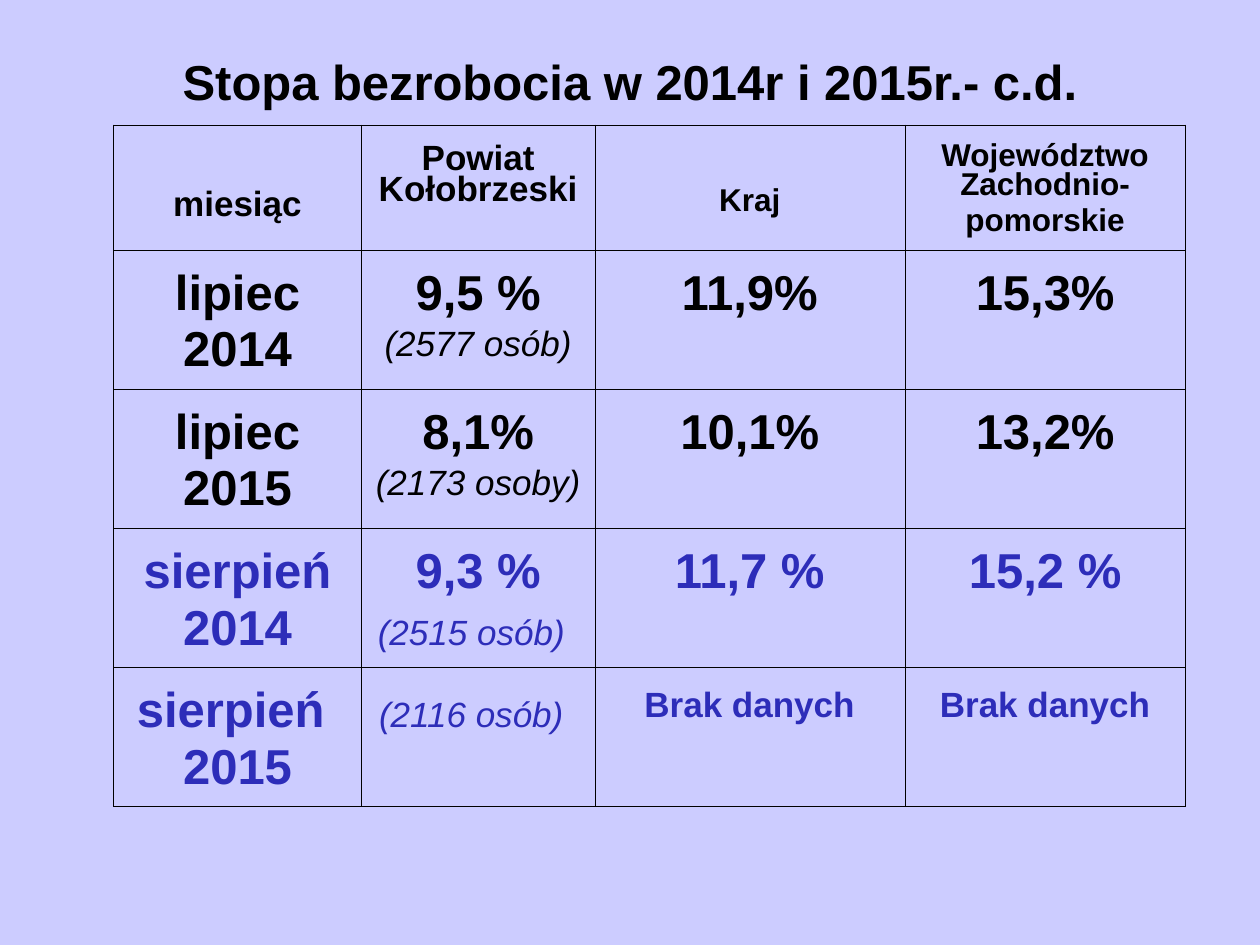
import pptx
import pptx.dml.color
import pptx.enum.text
import pptx.oxml
import pptx.oxml.ns
import pptx.util

WIDTH, HEIGHT = 10, 7.5
BLACK, BLUE, LAVENDER = "000000", "2D2DB9", "CCCCFF"
COLUMNS = [1.97, 1.85, 2.46, 2.23]
ROWS = [0.94] + [1.05] * 4
INNER_LINE, OUTER_LINE = 0.11, 0.23

# Each header: paragraphs, font size, top margin, space before
HEADERS = [
    (["miesiąc"], 20, 0.53, 4.5),
    (["Powiat Kołobrzeski"], 20, 0.16, 5),
    (["Kraj"], 18, 0.51, 4.5),
    (["Województwo Zachodnio-", "pomorskie"], 18, 0.15, 4.5),
]
# Each month: colour, name, year, county rate, county count, country, province
MONTHS = [
    (BLACK, "lipiec", "2014", "9,5 %", "(2577 osób)", "11,9%", "15,3%"),
    (BLACK, "lipiec", "2015", "8,1%", "(2173 osoby)", "10,1%", "13,2%"),
    (BLUE, "sierpień", "2014", "9,3 %", "(2515 osób)", "11,7 %", "15,2 %"),
    (BLUE, "sierpień ", "2015", None, "(2116 osób)", "Brak danych", "Brak danych"),
]


def rgb(value):
    return pptx.dml.color.RGBColor.from_string(value)


def add_run(paragraph, text, size, color=BLACK, italic=False):
    """Add bold text, or regular italic text."""
    run = paragraph.add_run()
    run.text = text
    run.font.name = "Arial"
    run.font.size = pptx.util.Pt(size)
    run.font.bold = not italic
    run.font.italic = italic
    run.font.color.rgb = rgb(color)


def fill_cell(cell, paragraphs, color=BLACK, top=0.2, before=7):
    """Write paragraphs, each a list of (text, size, italic) runs."""
    cell.fill.background()
    cell.margin_top = pptx.util.Inches(top)
    frame = cell.text_frame
    for index, runs in enumerate(paragraphs):
        paragraph = frame.add_paragraph() if index else frame.paragraphs[0]
        paragraph.alignment = pptx.enum.text.PP_ALIGN.CENTER
        paragraph.line_spacing = 0.81
        paragraph.space_before = pptx.util.Pt(before)
        for text, size, italic in runs:
            add_run(paragraph, text, size, color, italic)


def set_borders(cell, widths):
    """Draw black borders with widths in the order left, right, top, bottom."""
    properties = cell._tc.get_or_add_tcPr()
    for index, (side, width) in enumerate(zip("LRTB", widths)):
        line = pptx.oxml.parse_xml(
            f'<a:ln{side} {pptx.oxml.ns.nsdecls("a")} w="{pptx.util.Pt(width)}">'
            f'<a:solidFill><a:srgbClr val="{BLACK}"/></a:solidFill></a:ln{side}>'
        )
        properties.insert(index, line)


def add_title(slide, text):
    box = slide.shapes.add_textbox(
        *(pptx.util.Inches(length) for length in (0.05 * WIDTH, 0.04 * HEIGHT, 0.9 * WIDTH, 0.69))
    )
    frame = box.text_frame
    frame.word_wrap = True
    frame.vertical_anchor = pptx.enum.text.MSO_ANCHOR.MIDDLE
    paragraph = frame.paragraphs[0]
    paragraph.alignment = pptx.enum.text.PP_ALIGN.CENTER
    add_run(paragraph, text, 28)


def add_grid(slide):
    """Add the empty table with its column widths, row heights and borders."""
    bounds = (0.09 * WIDTH, 0.99, sum(COLUMNS), sum(ROWS))
    table = slide.shapes.add_table(
        len(ROWS), len(COLUMNS), *(pptx.util.Inches(length) for length in bounds)
    ).table
    table.first_row = table.horz_banding = False
    for column, width in zip(table.columns, COLUMNS):
        column.width = pptx.util.Inches(width)
    for row, height in zip(table.rows, ROWS):
        row.height = pptx.util.Inches(height)
    last_row, last_column = len(ROWS) - 1, len(COLUMNS) - 1
    for row in range(len(ROWS)):
        for column in range(len(COLUMNS)):
            edges = (column == 0, column == last_column, row == 0, row == last_row)
            widths = [OUTER_LINE if edge else INNER_LINE for edge in edges]
            set_borders(table.cell(row, column), widths)
    return table


def fill_month(table, row, month):
    color, name, year, rate, count, country, province = month
    county = [[(rate, 28, False)]] if rate else []
    count_runs = [(count, 20, True)]
    if color == BLUE:
        count_runs.append((" ", 28, False))
    county.append(count_runs)
    size = 28 if rate else 20
    cells = [
        [[(name, 28, False)], [(year, 28, False)]],
        county,
        [[(country, size, False)]],
        [[(province, size, False)]],
    ]
    for column, paragraphs in enumerate(cells):
        fill_cell(table.cell(row, column), paragraphs, color)


def main():
    presentation = pptx.Presentation()
    presentation.slide_width = pptx.util.Inches(WIDTH)
    presentation.slide_height = pptx.util.Inches(HEIGHT)
    slide = presentation.slides.add_slide(presentation.slide_layouts[6])
    slide.background.fill.solid()
    slide.background.fill.fore_color.rgb = rgb(LAVENDER)

    add_title(slide, "Stopa bezrobocia w 2014r i 2015r.- c.d.")
    table = add_grid(slide)
    for column, (lines, size, top, before) in enumerate(HEADERS):
        paragraphs = [[(line, size, False)] for line in lines]
        fill_cell(table.cell(0, column), paragraphs, top=top, before=before)
    for row, month in enumerate(MONTHS, start=1):
        fill_month(table, row, month)
    presentation.save("out.pptx")


if __name__ == "__main__":
    main()
